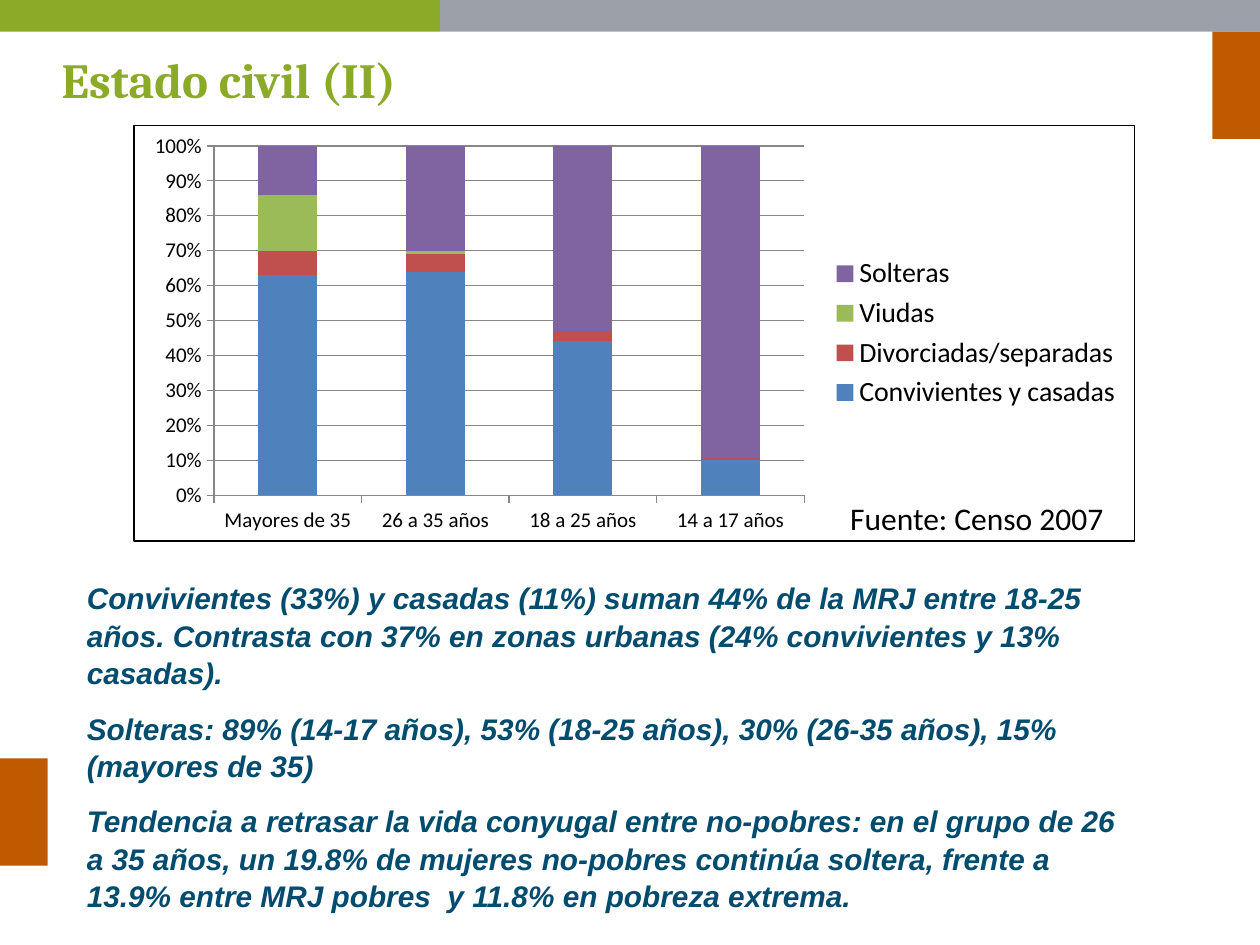
from lxml import etree
from pptx import Presentation
from pptx.chart.data import CategoryChartData
from pptx.dml.color import RGBColor
from pptx.enum.chart import XL_CHART_TYPE, XL_LEGEND_POSITION, XL_TICK_MARK
from pptx.enum.shapes import MSO_SHAPE
from pptx.enum.text import MSO_ANCHOR, PP_ALIGN
from pptx.oxml import parse_xml
from pptx.oxml.ns import qn
from pptx.util import Cm, Pt

GREEN, GREY, ORANGE, NAVY, BLACK = "8BAA27", "9CA1A9", "BF5A00", "004C6F", "000000"
AXIS_GREY = "868686"
CHART_NS = "http://schemas.openxmlformats.org/drawingml/2006/chart"
DRAWING_NS = "http://schemas.openxmlformats.org/drawingml/2006/main"

AGE_GROUPS = ["Mayores de 35", "26 a 35 años", "18 a 25 años", "14 a 17 años"]
MARITAL_STATUS = [
    ("Convivientes y casadas", [0.63, 0.64, 0.44, 0.10], "4F81BD"),
    ("Divorciadas/separadas", [0.07, 0.05, 0.03, 0.01], "C0504D"),
    ("Viudas", [0.16, 0.01, 0, 0], "9BBB59"),
    ("Solteras", [0.15, 0.30, 0.53, 0.89], "8064A2"),
]
FINDINGS = [
    "Convivientes (33%) y casadas (11%) suman 44% de la MRJ entre 18-25 años. "
    "Contrasta con 37% en zonas urbanas (24% convivientes y 13% casadas).",
    "Solteras: 89% (14-17 años), 53% (18-25 años), 30% (26-35 años), 15% (mayores de 35)",
    "Tendencia a retrasar la vida conyugal entre no-pobres: en el grupo de 26 a 35 años, "
    "un 19.8% de mujeres no-pobres continúa soltera, frente a 13.9% entre MRJ pobres  "
    "y 11.8% en pobreza extrema.",
]


def color(value):
    return RGBColor.from_string(value)


def lengths(box):
    return [Cm(value) for value in box]


def add_span(para, text, font_name, size, tint, bold=False, italic=False):
    span = para.add_run()
    span.text = text
    font = span.font
    font.name, font.size, font.bold, font.italic = font_name, Pt(size), bold, italic
    font.color.rgb = color(tint)


def place_title(page, box):
    title = page.shapes.title
    title.left, title.top, title.width, title.height = lengths(box)
    frame = title.text_frame
    frame.vertical_anchor = MSO_ANCHOR.MIDDLE
    para = frame.paragraphs[0]
    para.alignment = PP_ALIGN.LEFT
    para.line_spacing = 0.9
    add_span(para, "Estado civil (II)", "Cambria", 28, GREEN, bold=True)


def add_findings(page, box):
    frame = page.shapes.add_textbox(*lengths(box)).text_frame
    frame.word_wrap = True
    for index, text in enumerate(FINDINGS):
        para = frame.add_paragraph() if index else frame.paragraphs[0]
        para.line_spacing = 1.05
        para.space_before, para.space_after = Pt(3.4), Pt(6.8)
        add_span(para, text, "Arial", 17, NAVY, bold=True, italic=True)


def add_block(page, box, fill):
    block = page.shapes.add_shape(MSO_SHAPE.RECTANGLE, *lengths(box))
    block.shadow.inherit = False
    block.fill.solid()
    block.fill.fore_color.rgb = color(fill)
    block.line.fill.background()


def add_decoration(page, width):
    """Bars along the top and tabs on both sides."""
    bar_height, split = 0.64, 8.87
    tab_width, tab_height = 0.96, 2.16
    add_block(page, (split, 0, width - split, bar_height), GREY)
    add_block(page, (width - tab_width, bar_height, tab_width, tab_height), ORANGE)
    add_block(page, (0, 0, split, bar_height), GREEN)
    add_block(page, (0, 15.29, tab_width, tab_height), ORANGE)


def fix_plot_area(chart, x, y, w, h):
    """Set the inner plot area as fractions of the chart."""
    area = chart.element.find(".//" + qn("c:plotArea"))
    for old in area.findall(qn("c:layout")):
        area.remove(old)
    layout = etree.Element(qn("c:layout"))
    manual = etree.SubElement(layout, qn("c:manualLayout"))
    settings = [("layoutTarget", "inner"), ("xMode", "edge"), ("yMode", "edge"),
                ("x", x), ("y", y), ("w", w), ("h", h)]
    for name, value in settings:
        etree.SubElement(manual, qn("c:" + name)).set("val", str(value))
    area.insert(0, layout)


def add_chart_border(chart, tint, width):
    border = parse_xml(
        f'<c:spPr xmlns:c="{CHART_NS}" xmlns:a="{DRAWING_NS}"><a:noFill/>'
        f'<a:ln w="{Pt(width)}"><a:solidFill><a:srgbClr val="{tint}"/></a:solidFill></a:ln>'
        '</c:spPr>')
    chart.element.find(qn("c:chart")).addnext(border)


def format_axis(axis):
    axis.major_tick_mark = XL_TICK_MARK.OUTSIDE
    axis.minor_tick_mark = XL_TICK_MARK.NONE
    axis.tick_labels.font.size = Pt(12)
    axis.format.line.color.rgb = color(AXIS_GREY)
    axis.format.line.width = Pt(0.75)


def add_status_chart(page, box):
    data = CategoryChartData(number_format="0%")
    data.categories = AGE_GROUPS
    for name, values, _ in MARITAL_STATUS:
        data.add_series(name, values)
    chart = page.shapes.add_chart(XL_CHART_TYPE.COLUMN_STACKED, *lengths(box), data).chart
    chart.has_title = False
    chart.font.name, chart.font.size = "Calibri", Pt(10)
    chart.font.color.rgb = color(BLACK)

    plot = chart.plots[0]
    plot.vary_by_categories = False
    plot.gap_width, plot.overlap = 150, 100
    for series, (_, _, tint) in zip(plot.series, MARITAL_STATUS):
        series.format.fill.solid()
        series.format.fill.fore_color.rgb = color(tint)

    values = chart.value_axis
    format_axis(chart.category_axis)
    format_axis(values)
    values.minimum_scale, values.maximum_scale, values.major_unit = 0, 1, 0.1
    values.tick_labels.number_format = "0%"
    values.tick_labels.number_format_is_linked = False
    values.has_major_gridlines = True
    values.major_gridlines.format.line.color.rgb = color(AXIS_GREY)
    values.major_gridlines.format.line.width = Pt(0.75)

    chart.has_legend = True
    chart.legend.position = XL_LEGEND_POSITION.RIGHT
    chart.legend.include_in_layout = False
    chart.legend.font.size = Pt(16)
    fix_plot_area(chart, 0.08, 0.05, 0.59, 0.84)
    add_chart_border(chart, BLACK, 0.75)


def add_source(page, box):
    frame = page.shapes.add_textbox(*lengths(box)).text_frame
    frame.word_wrap = True
    add_span(frame.paragraphs[0], "Fuente: Censo 2007", "Calibri", 18, BLACK)


def main():
    width, height = 25.4, 19.05
    deck = Presentation()
    deck.slide_width, deck.slide_height = Cm(width), Cm(height)
    page = deck.slides.add_slide(deck.slide_layouts[5])
    place_title(page, (0.99, 1.02, 23.65, 1.3))
    add_findings(page, (1.5, 11.53, 21.41, 6.81))
    add_decoration(page, width)
    add_status_chart(page, (2.69, 2.51, 20.19, 8.41))
    add_source(page, (16.89, 9.93, 5.99, 1.02))
    deck.save("out.pptx")


if __name__ == "__main__":
    main()
